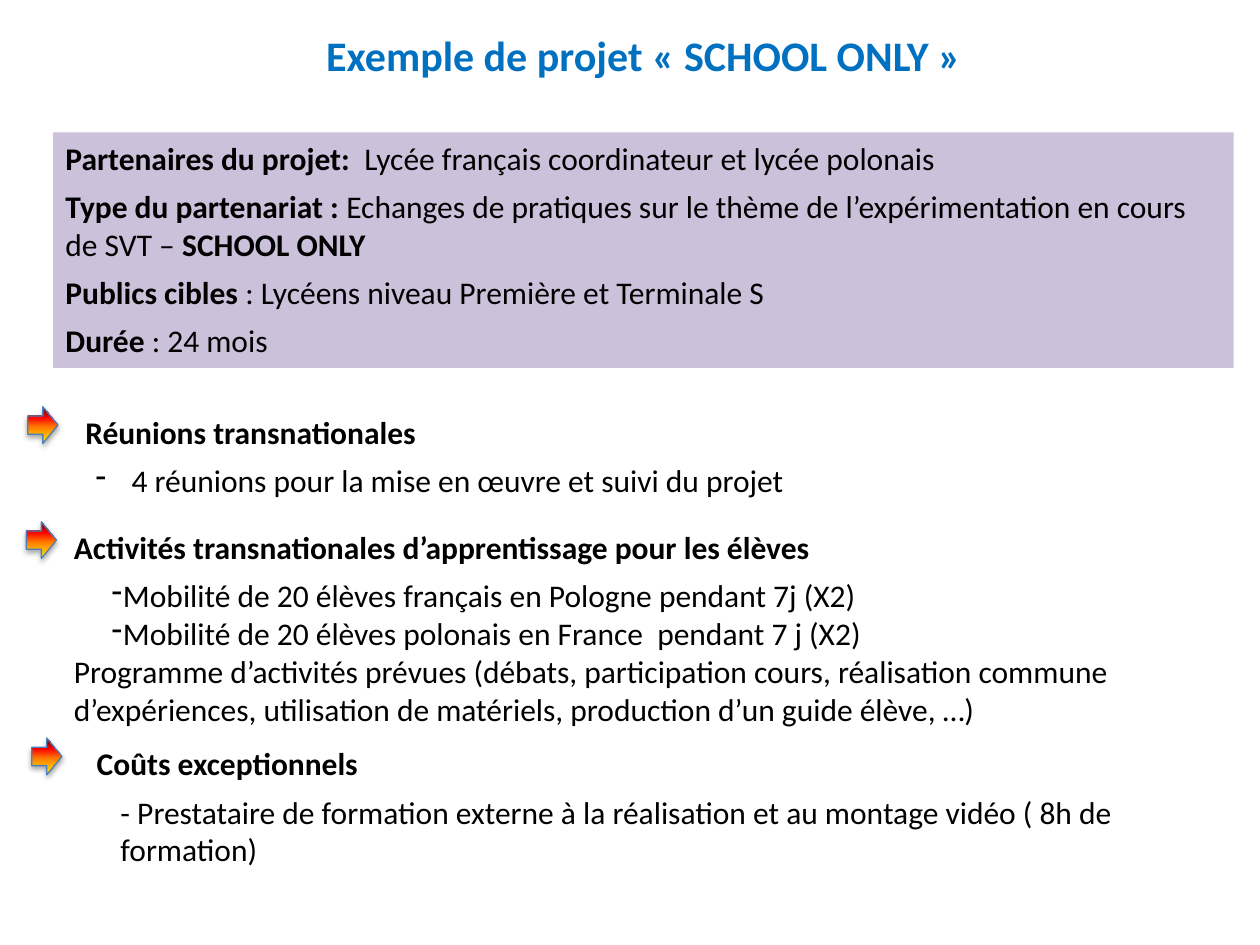
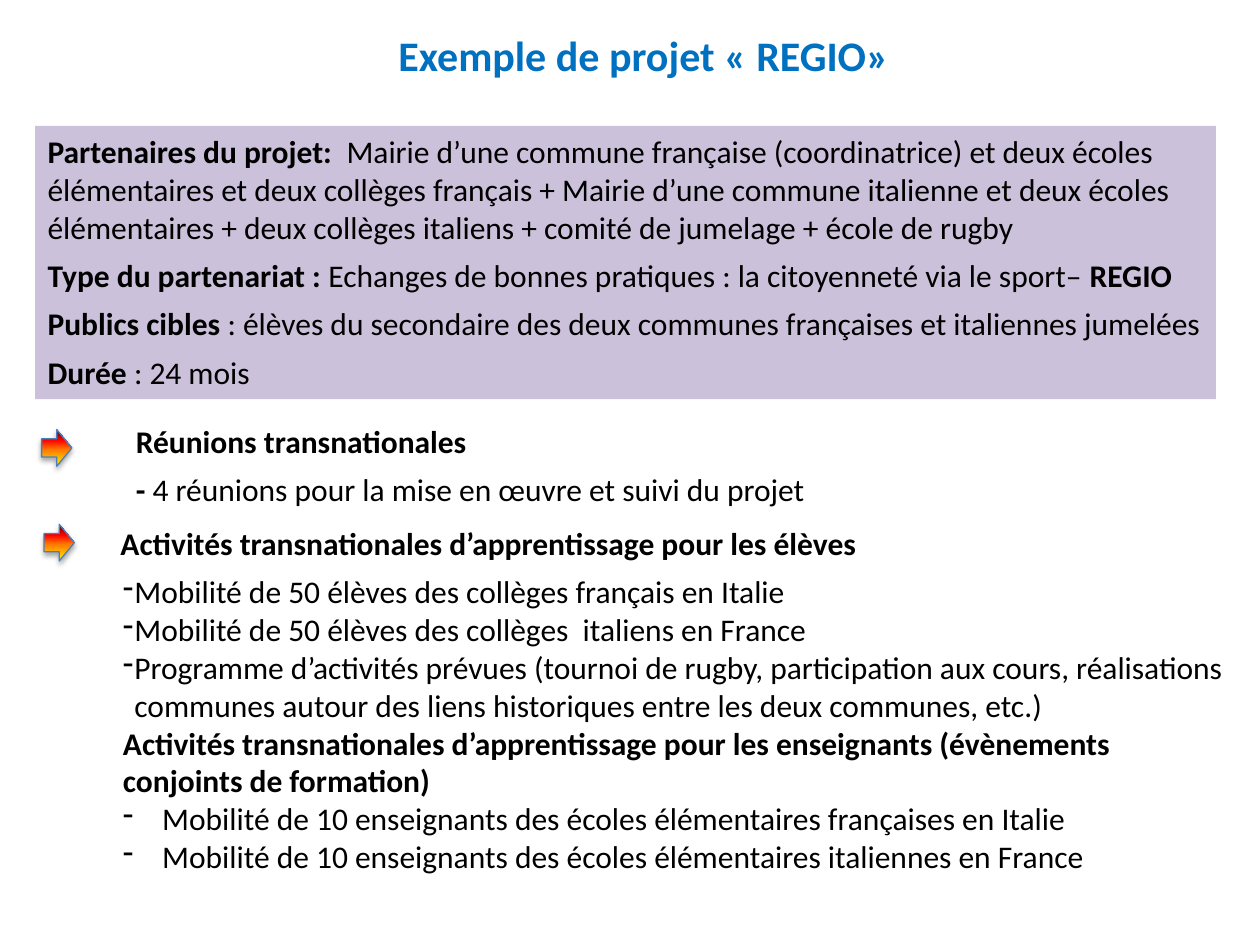
from lxml.etree import SubElement
from pptx import Presentation
from pptx.dml.color import RGBColor
from pptx.enum.shapes import MSO_SHAPE as Shape
from pptx.enum.text import MSO_ANCHOR as Anchor, MSO_AUTO_SIZE as AutoSize, PP_ALIGN as Align
from pptx.oxml.ns import qn
from pptx.util import Cm, Pt

rgb = RGBColor.from_string
FONT = "Calibri"
BLACK, TITLE_BLUE, LILAC, ARROW_EDGE = "000000", "0070C0", "CCC1DA", "4B7EBC"
ARROW_STOPS = [(0, "FFF200"), (45, "FF7A00"), (70, "FF0300"), (100, "4D0808")]
TITLE_PLACE = (1.47, 0.48, 23.01, 1.27)
FACT_LABELS = ["**Partenaires du projet:  **", "**Type du partenariat : **",
               "**Publics cibles **: ", "**Durée **: "]

# Paragraph styles: left margin (cm), first-line indent (cm), dash bullet, space after (pt)
STYLES = {
    "spaced": (0, 0, False, 6),
    "plain": (0, 0, False, 0),
    "shifted heading": (0.71, 0, False, 6),
    "inner heading": (0.76, 0, False, 0),
    "detail": (0.48, 0, False, 6),
    "meeting": (0.79, -0.58, True, 0),
    "tight dash": (0.99, -0.23, True, 0),
    "wide dash": (1.55, -0.79, True, 0),
}

# Content: text between ** marks is bold
projects = [
    {
        "title": "**Exemple de projet «\u00a0SCHOOL ONLY\u00a0»**".replace("\\u00a0", " "),
        "facts_place": (1.07, 2.67, 23.8, 4.75),
        "facts": [
            "Lycée français coordinateur et lycée polonais",
            "Echanges de pratiques sur le thème de l’expérimentation en cours de SVT – **SCHOOL ONLY**",
            "Lycéens niveau Première et Terminale S",
            "24 mois",
        ],
        "sections": [
            ((0.56, 8.2), (1.47, 8.2, 23.93, 2.01), [
                ("spaced", "**Réunions transnationales**"),
                ("meeting", " 4 réunions pour la mise en œuvre et suivi du projet"),
            ]),
            ((0.53, 10.52), (1.24, 10.52, 23.01, 4.32), [
                ("spaced", "**Activités transnationales d’apprentissage pour les élèves**"),
                ("tight dash", "Mobilité de 20 élèves français en Pologne pendant 7j (X2)"),
                ("tight dash", "Mobilité de 20 élèves polonais en France  pendant 7 j (X2)"),
                ("plain", "Programme d’activités prévues (débats, participation cours, réalisation "
                          "commune d’expériences, utilisation de matériels, production d’un guide "
                          "élève, …)"),
            ]),
            ((0.64, 14.88), (1.7, 14.88, 23.7, 2.77), [
                ("spaced", "**Coûts exceptionnels**"),
                ("detail", "- Prestataire de formation externe à la réalisation et au montage "
                           "vidéo ( 8h de formation)"),
            ]),
        ],
    },
    {
        "title": "**Exemple de projet « REGIO»**",
        "facts_place": (0.71, 2.54, 23.8, 5.51),
        "facts": [
            "Mairie d’une commune française (coordinatrice) et deux écoles élémentaires et deux "
            "collèges français + Mairie d’une commune italienne et deux écoles élémentaires + "
            "deux collèges italiens + comité de jumelage + école de rugby",
            "Echanges de bonnes pratiques : la citoyenneté via le sport– **REGIO**",
            "élèves du secondaire des deux communes françaises et italiennes jumelées",
            "24 mois",
        ],
        "sections": [
            ((0.84, 8.66), (2.49, 8.38, 22.91, 2.01), [
                ("spaced", "**Réunions transnationales**"),
                ("spaced", "**-** 4 réunions pour la mise en œuvre et suivi du projet"),
            ]),
            ((0.89, 10.57), (1.47, 10.44, 23.55, 7.39), [
                ("shifted heading", "**Activités transnationales d’apprentissage pour les élèves**"),
                ("tight dash", "Mobilité de 50 élèves des collèges français en Italie"),
                ("tight dash", "Mobilité de 50 élèves des collèges  italiens en France"),
                ("tight dash", "Programme d’activités prévues (tournoi de rugby, participation aux "
                               "cours, réalisations communes autour des liens historiques entre "
                               "les deux communes, etc.)"),
                ("inner heading", "**Activités transnationales d’apprentissage pour les enseignants "
                                  "(évènements conjoints de formation)**"),
                ("wide dash", "Mobilité de 10 enseignants des écoles élémentaires françaises en Italie"),
                ("wide dash", "Mobilité de 10 enseignants des écoles élémentaires italiennes en France"),
            ]),
        ],
    },
]


def write_text(box, paragraphs, size=18, color=BLACK, align=Align.LEFT):
    frame = box.text_frame
    frame.word_wrap = True
    frame.auto_size = AutoSize.SHAPE_TO_FIT_TEXT
    frame.vertical_anchor = Anchor.TOP
    for number, (style, text) in enumerate(paragraphs):
        paragraph = frame.add_paragraph() if number else frame.paragraphs[0]
        margin, indent, dash, space_after = STYLES[style]
        properties = paragraph._p.get_or_add_pPr()
        properties.set("marL", str(Cm(margin)))
        properties.set("indent", str(Cm(indent)))
        if dash:
            SubElement(properties, qn("a:buFontTx"))
            SubElement(properties, qn("a:buChar"), char="-")
        paragraph.alignment = align
        paragraph.space_after = Pt(space_after)
        paragraph.font.name = FONT
        paragraph.font.size = Pt(size)
        paragraph.font.color.rgb = rgb(color)
        pieces = [(piece, i % 2 == 1) for i, piece in enumerate(text.split("**")) if piece]
        for piece, bold in pieces:
            run = paragraph.add_run()
            run.text = piece
            if len(pieces) == 1:
                paragraph.font.bold = bold
            else:
                run.font.bold = bold


def add_arrow(slide, left, top):
    arrow = slide.shapes.add_shape(Shape.RIGHT_ARROW, Cm(left), Cm(top), Cm(0.61), Cm(0.74))
    arrow.line.color.rgb = rgb(ARROW_EDGE)
    arrow.line.width = Pt(0.75)
    # Gradient running from yellow at the bottom to dark red at the top
    arrow.fill.gradient()
    arrow.fill.gradient_angle = 90
    properties = arrow._element.spPr
    stops = properties.find(".//" + qn("a:gsLst"))
    for stop in list(stops):
        stops.remove(stop)
    for percent, color in ARROW_STOPS:
        stop = SubElement(stops, qn("a:gs"), pos=str(percent * 1000))
        SubElement(stop, qn("a:srgbClr"), val=color)
    # Soft shadow below
    arrow.shadow.inherit = False
    shadow = SubElement(properties.find(qn("a:effectLst")), qn("a:outerShdw"), blurRad=str(Pt(3.1)),
                        dist=str(Pt(1.8)), dir="5400000", rotWithShape="0")
    shadow_color = SubElement(shadow, qn("a:srgbClr"), val=BLACK)
    SubElement(shadow_color, qn("a:alpha"), val="35000")


deck = Presentation()
deck.slide_width, deck.slide_height = Cm(25.4), Cm(19.05)

for project in projects:
    slide = deck.slides.add_slide(deck.slide_layouts[6])

    # Title
    title = slide.shapes.add_textbox(*map(Cm, TITLE_PLACE))
    write_text(title, [("plain", project["title"])], 24, TITLE_BLUE, Align.CENTER)

    # Project facts on the lilac panel
    facts = slide.shapes.add_shape(Shape.RECTANGLE, *map(Cm, project["facts_place"]))
    facts.shadow.inherit = False
    facts.fill.solid()
    facts.fill.fore_color.rgb = rgb(LILAC)
    facts.line.fill.background()
    write_text(facts, [("spaced", label + fact) for label, fact in zip(FACT_LABELS, project["facts"])])

    # Sections, each marked by an arrow
    for arrow_place, section_place, paragraphs in project["sections"]:
        section = slide.shapes.add_textbox(*map(Cm, section_place))
        write_text(section, paragraphs)
        add_arrow(slide, *arrow_place)

deck.save("out.pptx")
